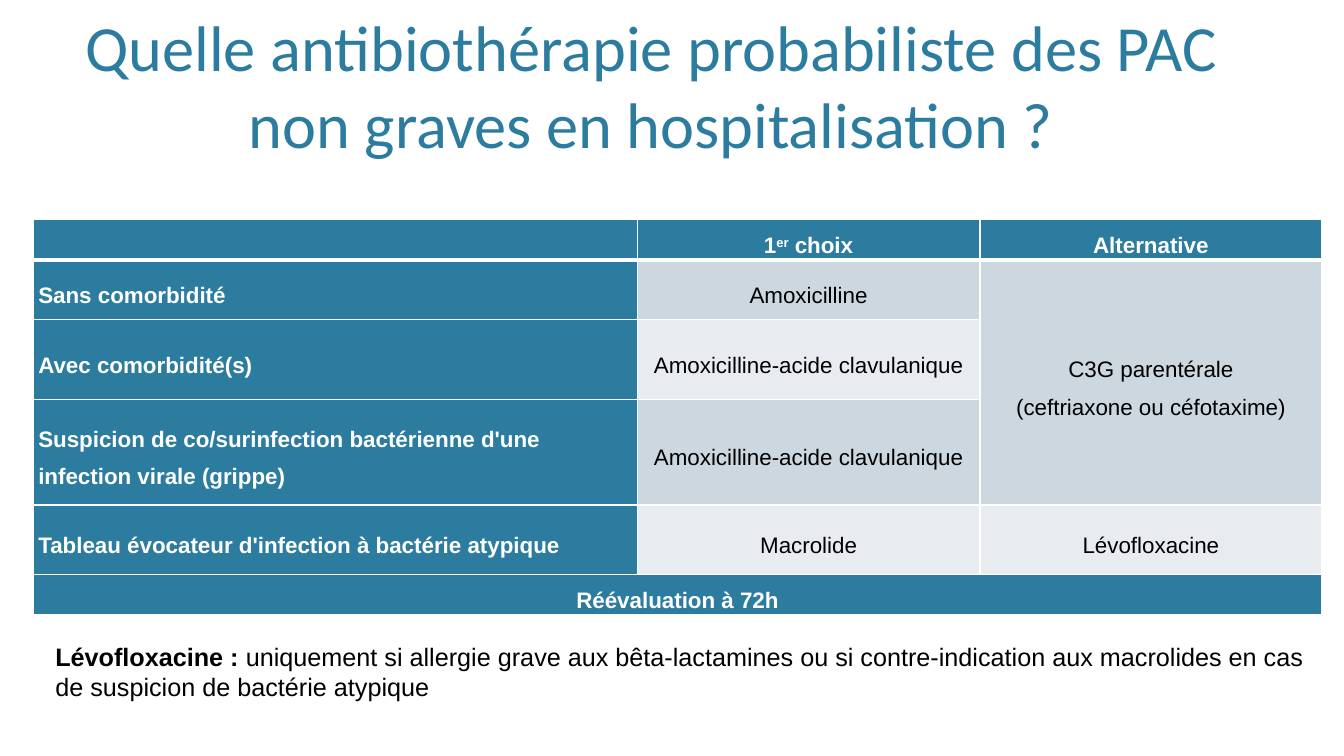
from dataclasses import dataclass

import pptx
import pptx.dml.color
import pptx.enum.text
import pptx.oxml
import pptx.oxml.ns
import pptx.util
from pptx.util import Inches

ALIGN = pptx.enum.text.PP_ALIGN
ANCHOR = pptx.enum.text.MSO_ANCHOR


@dataclass(frozen=True)
class Theme:
    teal: str = "2C7C9F"
    white: str = "FFFFFF"
    black: str = "000000"
    band_dark: str = "CDD7DF"
    band_light: str = "E8ECF0"
    title_font: str = "Calibri"
    body_font: str = "Arial"
    title_size: int = 46
    table_size: int = 16
    note_size: int = 18


THEME = Theme()
COLUMN_WIDTHS = (5.99, 3.4, 3.39)
ROW_HEIGHTS = (0.32, 0.59, 0.79, 1.05, 0.69, 0.32)
HEADINGS = ("", "1^er^ choix", "Alternative")
TREATMENTS = (
    ("Sans comorbidité", "Amoxicilline", "C3G parentérale\n(ceftriaxone ou céfotaxime)"),
    ("Avec comorbidité(s)", "Amoxicilline-acide clavulanique", None),
    ("Suspicion de co/surinfection bactérienne d'une infection virale (grippe)",
     "Amoxicilline-acide clavulanique", None),
    ("Tableau évocateur d'infection à bactérie atypique", "Macrolide", "Lévofloxacine"),
)


def rgb(color):
    return pptx.dml.color.RGBColor.from_string(color)


def add_run(paragraph, text, *, font=THEME.body_font, size=THEME.table_size,
            color=THEME.black, bold=False, superscript=False):
    run = paragraph.add_run()
    run.text = text
    run.font.name = font
    run.font.size = pptx.util.Pt(size)
    run.font.bold = bold
    run.font.color.rgb = rgb(color)
    if superscript:
        run.font._element.set("baseline", "30000")


def write_text(frame, text, *, align=ALIGN.LEFT, line_spacing=None, **run_format):
    """Write one paragraph per line; text between ^ marks is superscript."""
    for index, line in enumerate(text.split("\n")):
        paragraph = frame.add_paragraph() if index else frame.paragraphs[0]
        paragraph.alignment = align
        if line_spacing:
            paragraph.line_spacing = line_spacing
        for part, piece in enumerate(line.split("^")):
            add_run(paragraph, piece, superscript=part % 2 == 1, **run_format)


def add_text_box(slide, left, top, width, height, anchor=ANCHOR.TOP):
    box = slide.shapes.add_textbox(Inches(left), Inches(top), Inches(width), Inches(height))
    box.text_frame.word_wrap = True
    box.text_frame.vertical_anchor = anchor
    return box.text_frame


def set_borders(cell, **widths):
    """Draw white borders, 1 point wide unless a side is given another width."""
    properties = cell._tc.get_or_add_tcPr()
    for index, side in enumerate("LRTB"):
        width = pptx.util.Pt(widths.get(side, 1))
        properties.insert(index, pptx.oxml.parse_xml(
            f'<a:ln{side} {pptx.oxml.ns.nsdecls("a")} w="{width}"><a:solidFill>'
            f'<a:srgbClr val="{THEME.white}"/></a:solidFill></a:ln{side}>'))


def style_cell(cell, fill, **border_widths):
    cell.fill.solid()
    cell.fill.fore_color.rgb = rgb(fill)
    cell.vertical_anchor = ANCHOR.MIDDLE
    cell.margin_left = cell.margin_right = Inches(0.05)
    cell.margin_top = cell.margin_bottom = 0
    set_borders(cell, **border_widths)


def fill_cell(cell, text, *, heading=False, align=ALIGN.CENTER):
    write_text(cell.text_frame, text, align=align, line_spacing=1.5, bold=heading,
               color=THEME.white if heading else THEME.black)


def add_treatment_table(slide):
    table = slide.shapes.add_table(
        len(ROW_HEIGHTS), len(COLUMN_WIDTHS), Inches(0.33), Inches(2.18),
        Inches(sum(COLUMN_WIDTHS)), Inches(sum(ROW_HEIGHTS))).table
    for column, width in zip(table.columns, COLUMN_WIDTHS):
        column.width = Inches(width)
    for row, height in zip(table.rows, ROW_HEIGHTS):
        row.height = Inches(height)

    last_row = len(ROW_HEIGHTS) - 1
    for column, heading in enumerate(HEADINGS):
        style_cell(table.cell(0, column), THEME.teal, B=3)
        fill_cell(table.cell(0, column), heading, heading=True)
        style_cell(table.cell(last_row, column), THEME.teal)
    for row, texts in enumerate(TREATMENTS, start=1):
        band = THEME.band_dark if row % 2 else THEME.band_light
        for column, text in enumerate(texts):
            cell = table.cell(row, column)
            is_label = column == 0
            style_cell(cell, THEME.teal if is_label else band, T=3 if row == 1 else 1)
            if text is not None:
                fill_cell(cell, text, heading=is_label,
                          align=ALIGN.LEFT if is_label else ALIGN.CENTER)

    table.cell(1, 2).merge(table.cell(3, 2))
    table.cell(last_row, 0).merge(table.cell(last_row, 2))
    fill_cell(table.cell(last_row, 0), "Réévaluation à 72h", heading=True)


def add_title(slide):
    frame = add_text_box(slide, 0.59, 0.19, 11.73, 1.46, ANCHOR.BOTTOM)
    write_text(frame, "Quelle antibiothérapie probabiliste des PAC non graves en hospitalisation ?",
               align=ALIGN.CENTER, font=THEME.title_font, size=THEME.title_size, color=THEME.teal)


def add_note(slide):
    frame = add_text_box(slide, 0.45, 6.31, 12.78, 0.71)
    write_text(frame, "Lévofloxacine : ", size=THEME.note_size, bold=True)
    add_run(frame.paragraphs[0],
            "uniquement si allergie grave aux bêta-lactamines ou si contre-indication "
            "aux macrolides en cas de suspicion de bactérie atypique", size=THEME.note_size)
    frame.paragraphs[0].space_after = pptx.util.Pt(10)


def main():
    presentation = pptx.Presentation()
    presentation.slide_width = Inches(13.33)
    presentation.slide_height = Inches(7.5)
    slide = presentation.slides.add_slide(presentation.slide_layouts[6])
    add_title(slide)
    add_treatment_table(slide)
    add_note(slide)
    presentation.save("out.pptx")


if __name__ == "__main__":
    main()
